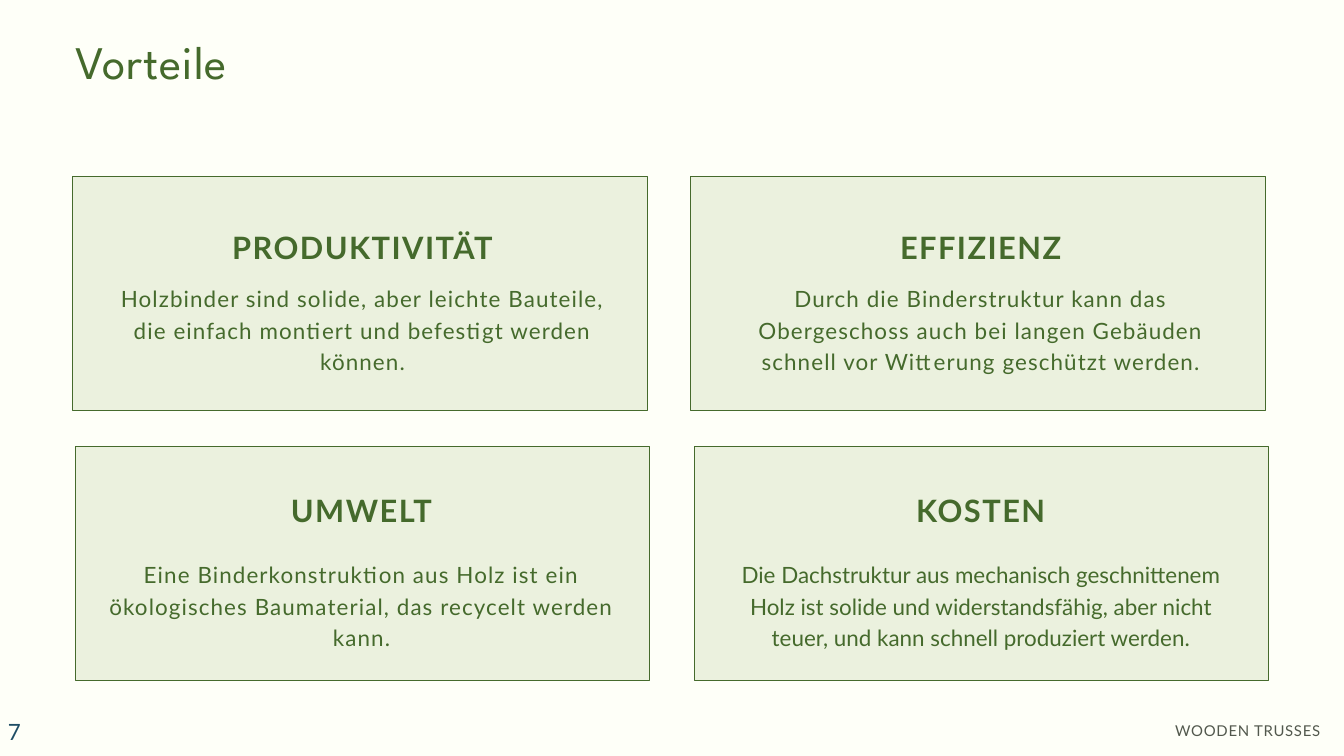
from dataclasses import dataclass

from pptx import Presentation
from pptx import util as u
from pptx.dml.color import RGBColor
from pptx.enum import shapes, text

COLS, ROWS = 20, 11.25
UNIT = u.Inches(1)  # one column wide, one row high


@dataclass(frozen=True)
class Style:
    size: float
    color: str
    lead: float = None
    track: float = 0
    font: str = "Lato"
    bold: bool = False


@dataclass(frozen=True)
class Theme:
    back: str = "FEFFF8"
    fill: str = "EBF1DE"
    green: str = "456A2C"
    title: Style = Style(50, "456A2C", 66.8, 1, "League Spartan")
    head: Style = Style(33, "456A2C", 41.2, 1.6, bold=True)
    body: Style = Style(24, "456A2C", 33.6, 1.2)
    tight: Style = Style(24, "456A2C", 33.6)
    foot: Style = Style(16, "52584D", 22.4, 0.8)
    page: Style = Style(24, "1E4D65", None, 1.2)


THEME = Theme()
LEFT, CENTER, RIGHT = (text.PP_ALIGN.LEFT, text.PP_ALIGN.CENTER,
                       text.PP_ALIGN.RIGHT)

# Per row of cards: top, heading offset, body offset
BANDS = [(2.62, 0.76, 1.56), (6.64, 0.66, 1.65)]
CARD_W, CARD_H = 8.55, 3.48

# Row, left edge, text inset, text width, heading, body, body style
CARDS = [
    (0, 1.08, 0.62, 7.39, "PRODUKTIVITÄT",
     "Holzbinder sind solide, aber leichte Bauteile, die einfach montiert "
     "und befestigt werden können.", THEME.body),
    (0, 10.28, 0.62, 7.39, "EFFIZIENZ",
     "Durch die Binderstruktur kann das Obergeschoss auch bei langen "
     "Gebäuden schnell vor Witterung geschützt werden.", THEME.body),
    (1, 1.12, 0.3, 7.92, "UMWELT",
     "Eine Binderkonstruktion aus Holz ist ein ökologisches Baumaterial, "
     "das recycelt werden kann.", THEME.body),
    (1, 10.33, 0.57, 7.39, "KOSTEN",
     "Die Dachstruktur aus mechanisch geschnittenem Holz ist solide und "
     "widerstandsfähig, aber nicht teuer, und kann schnell produziert "
     "werden.", THEME.tight),
]


def rgb(code):
    return RGBColor.from_string(code)


def place(box):
    """Turn columns and rows into slide lengths."""
    return [u.Emu(round(n * UNIT)) for n in box]


def write(slide, box, words, style, align=LEFT, pad=(0, 0)):
    """Add a text box; pad is the side and top inset."""
    frame = slide.shapes.add_textbox(*place(box)).text_frame
    frame.word_wrap = True
    frame.margin_left = frame.margin_right = u.Inches(pad[0])
    frame.margin_top = frame.margin_bottom = u.Inches(pad[1])
    frame.text = words
    para = frame.paragraphs[0]
    para.alignment = align
    if style.lead:
        para.line_spacing = u.Pt(style.lead)
    run = para.runs[0]
    run.font.name = style.font
    run.font.size = u.Pt(style.size)
    run.font.bold = style.bold
    run.font.color.rgb = rgb(style.color)
    if style.track:
        run._r.get_or_add_rPr().set("spc", str(round(style.track * 100)))
    return frame


def card(slide, box, inset, wide, drops, head, body, style):
    """Draw a framed card; drops are the heading and body offsets."""
    x, y, _, _ = box
    rect = slide.shapes.add_shape(shapes.MSO_SHAPE.RECTANGLE, *place(box))
    rect.shadow.inherit = False
    rect.fill.solid()
    rect.fill.fore_color.rgb = rgb(THEME.fill)
    rect.line.color.rgb = rgb(THEME.green)
    rect.line.width = u.Pt(0.75)
    write(slide, (x + inset, y + drops[0], wide, 0.56), head, THEME.head,
          CENTER)
    write(slide, (x + inset, y + drops[1], wide, 1.4), body, style, CENTER)


def footer(slide, box):
    x, y, w, h = box
    write(slide, (x + w - 8.32, y, 8.32, 0.29), "WOODEN TRUSSES",
          THEME.foot, RIGHT)
    page = write(slide, (x, y, 2.33, h), "7", THEME.page, pad=(0.1, 0.05))
    page.vertical_anchor = text.MSO_ANCHOR.MIDDLE


def main():
    deck = Presentation()
    deck.slide_width, deck.slide_height = place((COLS, ROWS))
    slide = deck.slides.add_slide(deck.slide_layouts[6])
    slide.background.fill.solid()
    slide.background.fill.fore_color.rgb = rgb(THEME.back)

    write(slide, (1.12, 0.39, 17.71, 0.94), "Vorteile", THEME.title)
    for row, x, inset, wide, head, body, style in CARDS:
        top, *drops = BANDS[row]
        card(slide, (x, top, CARD_W, CARD_H), inset, wide, drops,
             head, body, style)
    footer(slide, (0.02, 10.69, 19.63, 0.4))
    deck.save("out.pptx")


if __name__ == "__main__":
    main()
